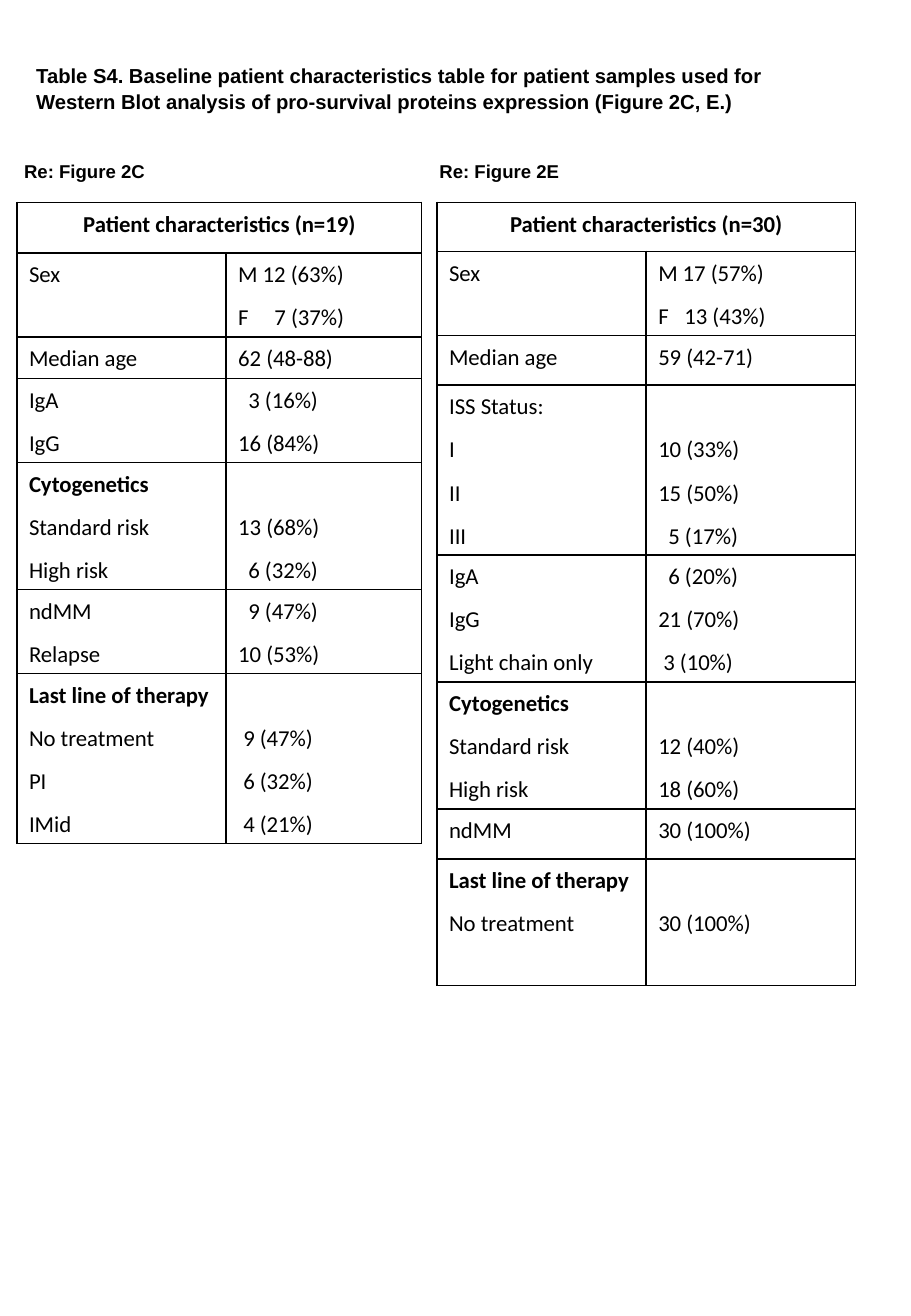
"""Build the slide with two baseline patient characteristics tables."""
from dataclasses import dataclass
from typing import NamedTuple

from lxml import etree
from pptx import Presentation
from pptx.dml import color
from pptx.enum import text
from pptx.oxml import ns
from pptx.util import Pt


@dataclass(frozen=True)
class Theme:
    ink: color.RGBColor = color.RGBColor(0, 0, 0)
    paper: color.RGBColor = color.RGBColor(255, 255, 255)
    heading_font: str = "Arial"
    table_font: str = "Calibri"
    title_size: float = 12
    caption_size: float = 11
    table_size: float = 13.5
    line_spacing: float = 1.07
    space_after: float = 8
    line_pitch: float = 25.6
    cell_margin: float = 3.6
    border: float = 1


class Line(NamedTuple):
    text: str
    bold: bool = False
    indent: float = 0
    tab: float = 0


class Group(NamedTuple):
    height: float
    labels: list[Line]
    values: list[Line]
    skipped: int = 0


class Cohort(NamedTuple):
    caption: str
    caption_left: float
    left: float
    columns: tuple[float, float]
    heading: str
    heading_height: float
    groups: list[Group]


THEME = Theme()
ONE, TWO, THREE, FOUR = 24, 49.6, 75.2, 100.2
TALL = 29.5
CYTOGENETICS = [Line("Cytogenetics", True), Line("Standard risk"), Line("High risk")]
THERAPY = [Line("Last line of therapy", True), Line("No treatment")]

COHORTS = [
    Cohort("Re: Figure 2C", 7.2, 10, (124, 116), "Patient characteristics (n=19)", 30, [
        Group(TWO, [Line("Sex")], [Line("M 12 (63%)"), Line("F\t7 (37%)", tab=21.5)]),
        Group(ONE, [Line("Median age")], [Line("62 (48-88)")]),
        Group(TWO, [Line("IgA"), Line("IgG")],
              [Line("3 (16%)", indent=6), Line("16 (84%)")]),
        Group(THREE, CYTOGENETICS, [Line("13 (68%)"), Line("6 (32%)", indent=6)], 1),
        Group(TWO, [Line("ndMM"), Line("Relapse")],
              [Line("9 (47%)", indent=6), Line("10 (53%)")]),
        Group(FOUR, THERAPY + [Line("PI"), Line("IMid")],
              [Line(value, indent=3) for value in ("9 (47%)", "6 (32%)", "4 (21%)")], 1),
    ]),
    Cohort("Re: Figure 2E", 253.4, 259, (124, 124), "Patient characteristics (n=30)", 29, [
        Group(TWO, [Line("Sex")], [Line("M 17 (57%)"), Line("F\t13 (43%)", tab=15.5)]),
        Group(TALL, [Line("Median age")], [Line("59 (42-71)")]),
        Group(FOUR, [Line("ISS Status:"), Line("I"), Line("II"), Line("III")],
              [Line("10 (33%)"), Line("15 (50%)"), Line("5 (17%)", indent=6)], 1),
        Group(THREE, [Line("IgA"), Line("IgG"), Line("Light chain only")],
              [Line("6 (20%)", indent=6), Line("21 (70%)"), Line("3 (10%)", indent=3)]),
        Group(THREE, CYTOGENETICS, [Line("12 (40%)"), Line("18 (60%)")], 1),
        Group(TALL, [Line("ndMM")], [Line("30 (100%)")]),
        Group(THREE, THERAPY, [Line("30 (100%)")], 1),
    ]),
]


def add_run(paragraph, words: str, font: str, size: float, bold: bool) -> None:
    """Add one styled run to a paragraph."""
    run = paragraph.add_run()
    run.text = words
    run.font.name, run.font.size, run.font.bold = font, Pt(size), bold
    run.font.color.rgb = THEME.ink


def space(paragraph) -> None:
    """Give a paragraph the shared line and paragraph spacing."""
    paragraph.line_spacing = THEME.line_spacing
    paragraph.space_after = Pt(THEME.space_after)


def add_heading(slide, words: str, left: float, top: float, width: float,
                height: float, size: float):
    """Add a bold heading box and return it."""
    heading = slide.shapes.add_textbox(Pt(left), Pt(top), Pt(width), Pt(height))
    frame = heading.text_frame
    frame.word_wrap = True
    frame.auto_size = text.MSO_AUTO_SIZE.SHAPE_TO_FIT_TEXT
    add_run(frame.paragraphs[0], words, THEME.heading_font, size, True)
    return heading


def draw_borders(cell) -> None:
    """Rule all four sides of a cell and leave it unfilled."""
    properties = cell._tc.get_or_add_tcPr()
    for side in ("a:lnL", "a:lnR", "a:lnT", "a:lnB"):
        edge = etree.SubElement(properties, ns.qn(side), w=str(Pt(THEME.border)))
        fill = etree.SubElement(edge, ns.qn("a:solidFill"))
        etree.SubElement(fill, ns.qn("a:srgbClr"), val=str(THEME.ink))
    cell.fill.background()


def write_cell(cell, lines: list[Line], skipped: int = 0) -> None:
    """Write lines into a cell, starting below any skipped lines."""
    cell.margin_top = Pt(THEME.cell_margin + skipped * THEME.line_pitch)
    frame = cell.text_frame
    for index, line in enumerate(lines):
        paragraph = frame.add_paragraph() if index else frame.paragraphs[0]
        space(paragraph)
        properties = paragraph._p.get_or_add_pPr()
        if line.indent:
            properties.set("marL", str(Pt(line.indent)))
        if line.tab:
            stops = etree.SubElement(properties, ns.qn("a:tabLst"))
            etree.SubElement(stops, ns.qn("a:tab"), pos=str(Pt(line.tab)), algn="l")
        add_run(paragraph, line.text, THEME.table_font, THEME.table_size, line.bold)


def add_cohort(slide, cohort: Cohort) -> None:
    """Add a cohort's caption and its table."""
    add_heading(slide, cohort.caption, cohort.caption_left, 91.4, 144, 20.6,
                THEME.caption_size)
    heights = [cohort.heading_height, *(group.height for group in cohort.groups)]
    table = slide.shapes.add_table(
        len(heights), 2, Pt(cohort.left), Pt(120),
        Pt(sum(cohort.columns)), Pt(sum(heights))).table
    table.first_row = table.horz_banding = False
    for column, width in zip(table.columns, cohort.columns):
        column.width = Pt(width)
    for row, height in zip(table.rows, heights):
        row.height = Pt(height)
    for cell in table.iter_cells():
        draw_borders(cell)
    heading = table.cell(0, 0)
    heading.merge(table.cell(0, 1))
    write_cell(heading, [Line(cohort.heading, True)])
    heading.text_frame.paragraphs[0].alignment = text.PP_ALIGN.CENTER
    for row, group in enumerate(cohort.groups, 1):
        write_cell(table.cell(row, 0), group.labels)
        write_cell(table.cell(row, 1), group.values, group.skipped)


def main() -> None:
    """Build and save the slide."""
    deck = Presentation()
    deck.slide_width, deck.slide_height = Pt(540), Pt(780)
    slide = deck.slides.add_slide(deck.slide_layouts[6])
    title = add_heading(
        slide, "Table S4. Baseline patient characteristics table for patient samples used for "
        "Western Blot analysis of pro-survival proteins expression (Figure 2C, E.)",
        14.4, 33.1, 448, 37.5, THEME.title_size)
    title.fill.solid()
    title.fill.fore_color.rgb = THEME.paper
    space(title.text_frame.paragraphs[0])
    for cohort in COHORTS:
        add_cohort(slide, cohort)
    deck.save("out.pptx")


if __name__ == "__main__":
    main()
